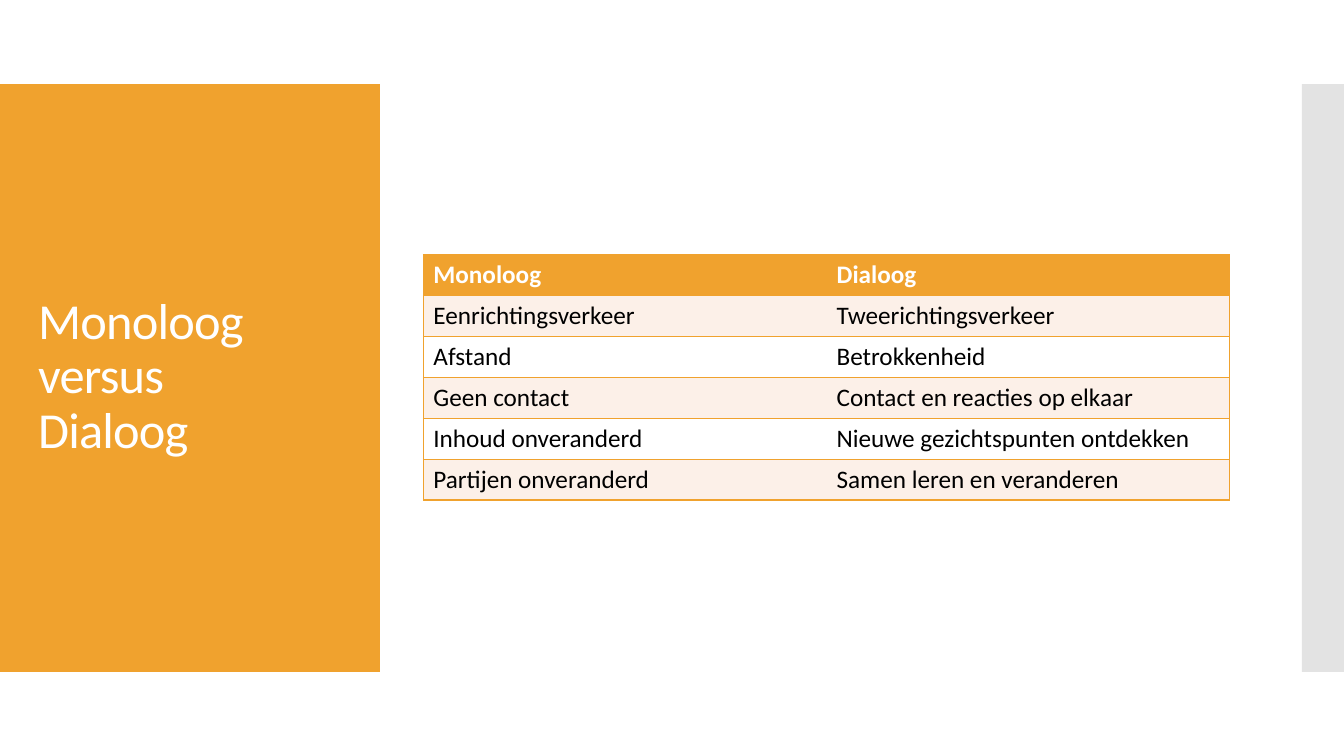
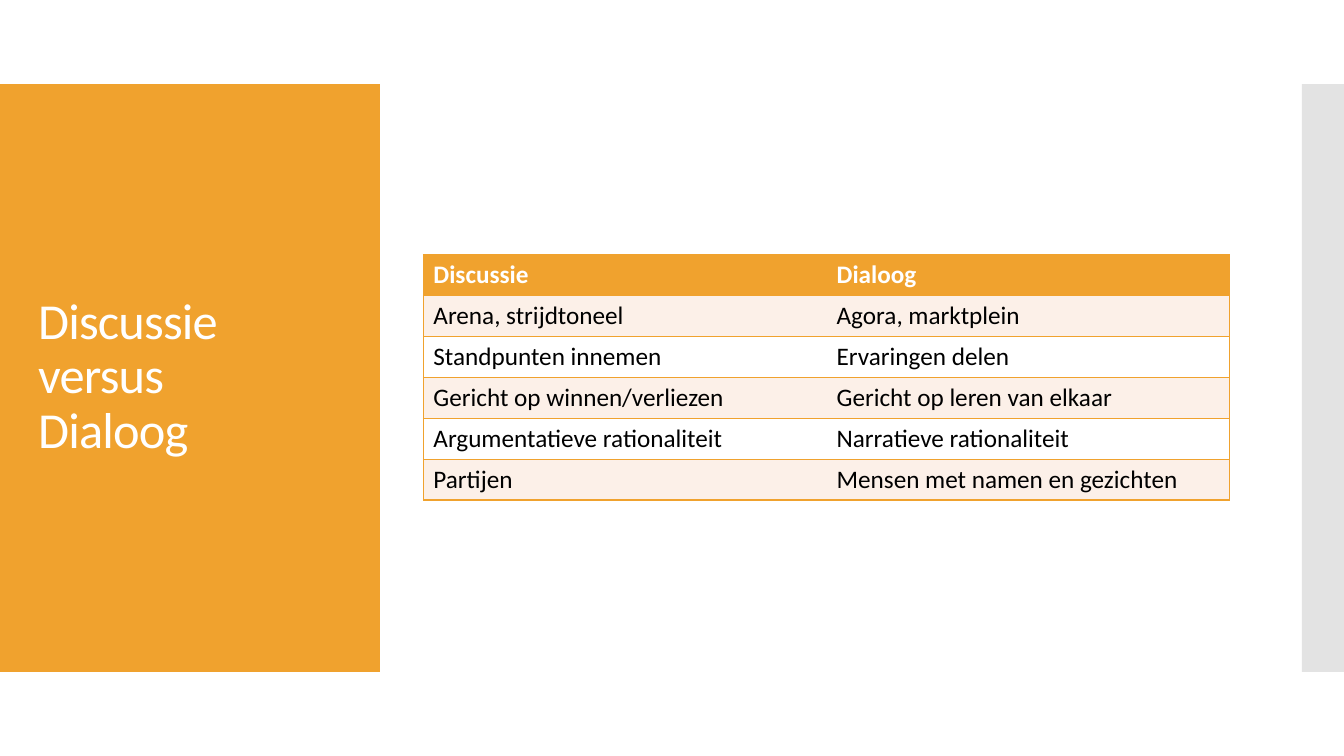
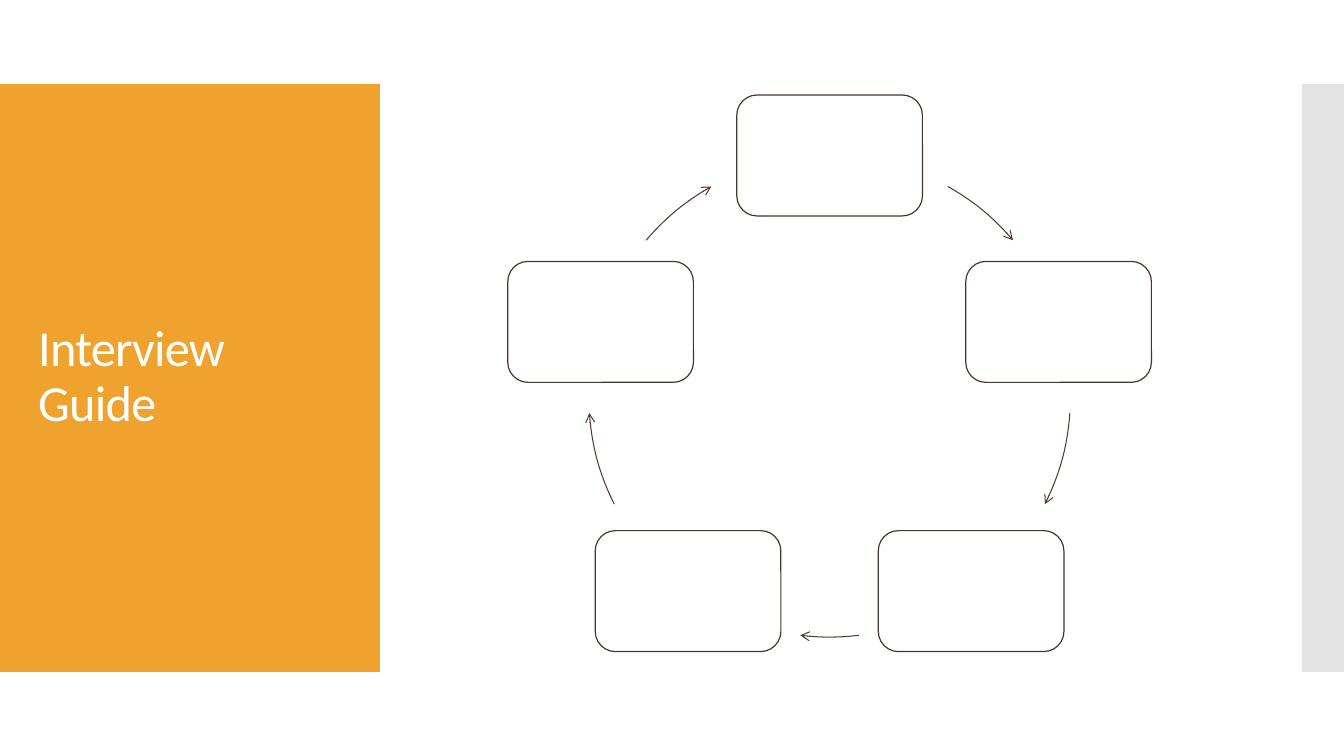
from math import cos, radians, sin

from lxml.etree import SubElement
from pptx import Presentation
from pptx.dml.color import RGBColor
from pptx.enum.shapes import MSO_SHAPE
from pptx.enum.text import MSO_ANCHOR
from pptx.oxml.ns import qn
from pptx.util import Pt

ORANGE, PALE, WHITE, BLACK = "F0A22E", "FCF0E8", "FFFFFF", "000000"
GREY, BOX_LINE, ARROW_LINE = "C8C8C8", "47362C", "4E3B30"
FONT = "Calibri"

BAND_TOP, BAND_H = 60, 420
TABLE_X, TABLE_Y, COLUMN_W, ROW_H = 302.4, 182, 288, 29.2
RING_X, RING_Y, RING_R = 592.6, 283.1, 172
BOX_W, BOX_H = 132.6, 86.4
# Start and end of each arrow, in degrees clockwise from the top of the ring
ARROWS = [(29.4, 49.6), (94, 116.6), (173, 187), (243.4, 266), (310.4, 330.6)]

TITLE_STYLE = {"name": FONT, "size": Pt(36), "bold": False}
HEADER_STYLE = {"name": FONT, "size": Pt(18), "bold": True}
BODY_STYLE = {**HEADER_STYLE, "bold": False}

MONOLOGUE_ROWS = [
    ("Monoloog", "Dialoog"),
    ("Eenrichtingsverkeer", "Tweerichtingsverkeer"),
    ("Afstand", "Betrokkenheid"),
    ("Geen contact", "Contact en reacties op elkaar"),
    ("Inhoud onveranderd", "Nieuwe gezichtspunten ontdekken"),
    ("Partijen onveranderd", "Samen leren en veranderen"),
]
DISCUSSION_ROWS = [
    ("Discussie", "Dialoog"),
    ("Arena, strijdtoneel", "Agora, marktplein"),
    ("Standpunten innemen", "Ervaringen delen"),
    ("Gericht op winnen/verliezen", "Gericht op leren van elkaar"),
    ("Argumentatieve rationaliteit", "Narratieve rationaliteit"),
    ("Partijen", "Mensen met namen en gezichten"),
]


def paint(target, color):
    """Give a fill a solid colour, or a font or line its colour."""
    if hasattr(target, "solid"):
        target.solid()
        target.fore_color.rgb = RGBColor.from_string(color)
    else:
        target.color.rgb = RGBColor.from_string(color)


def style_runs(p, style, color):
    for r in p.runs:
        for name, value in style.items():
            setattr(r.font, name, value)
        paint(r.font, color)


def add_preset(s, kind, x, y, w, h, fill=None, line=None, line_w=0.75):
    sp = s.shapes.add_shape(kind, Pt(x), Pt(y), Pt(w), Pt(h))
    sp.shadow.inherit = False
    if fill:
        paint(sp.fill, fill)
    else:
        sp.fill.background()
    if line:
        paint(sp.line, line)
        sp.line.width = Pt(line_w)
    else:
        sp.line.fill.background()
    return sp


def add_title(s, text):
    sp = s.shapes.add_textbox(Pt(20.2), Pt(88.6), Pt(231.8), Pt(362))
    tf = sp.text_frame
    tf.word_wrap = True
    tf.vertical_anchor = MSO_ANCHOR.MIDDLE
    p = tf.paragraphs[0]
    p.text = text
    p.line_spacing = 0.9
    style_runs(p, TITLE_STYLE, WHITE)
    for r in p.runs:
        r.font._element.set("spc", "-60")


def add_base_slide(prs, title):
    """Add a slide with the title panel and the grey strip."""
    s = prs.slides.add_slide(prs.slide_layouts[6])
    add_preset(s, MSO_SHAPE.RECTANGLE, 0, BAND_TOP, 271.4, BAND_H, ORANGE)
    strip = add_preset(s, MSO_SHAPE.RECTANGLE, 930, BAND_TOP, 30, BAND_H, GREY)
    color = strip._element.spPr.find(qn("a:solidFill"))[0]
    SubElement(color, qn("a:alpha"), val="50000")
    add_title(s, title)
    return s


def set_borders(cell, visible):
    """Draw the sides named in visible and blank the others."""
    tc_pr = cell._tc.get_or_add_tcPr()
    for side in "LRTB":
        ln = SubElement(tc_pr, qn(f"a:ln{side}"), w=str(Pt(1)))
        if side in visible:
            fill = SubElement(ln, qn("a:solidFill"))
            SubElement(fill, qn("a:srgbClr"), val=ORANGE)
        else:
            SubElement(ln, qn("a:noFill"))


def add_comparison(s, rows):
    table = s.shapes.add_table(
        len(rows), 2, Pt(TABLE_X), Pt(TABLE_Y),
        Pt(2 * COLUMN_W), Pt(len(rows) * ROW_H)).table
    table.first_row = table.horz_banding = False
    for i, row in enumerate(rows):
        table.rows[i].height = Pt(ROW_H)
        header = i == 0
        fill = ORANGE if header else PALE if i % 2 else WHITE
        for j, text in enumerate(row):
            cell = table.cell(i, j)
            set_borders(cell, "TB" + "LR"[j])
            paint(cell.fill, fill)
            p = cell.text_frame.paragraphs[0]
            p.text = text
            style_runs(p, HEADER_STYLE if header else BODY_STYLE,
                       WHITE if header else BLACK)


def add_ring_box(s, degrees):
    """Add a rounded box centred on the ring, clockwise from the top."""
    x = RING_X + RING_R * sin(radians(degrees))
    y = RING_Y - RING_R * cos(radians(degrees))
    add_preset(s, MSO_SHAPE.ROUNDED_RECTANGLE, x - BOX_W / 2, y - BOX_H / 2,
               BOX_W, BOX_H, WHITE, BOX_LINE, 0.85)


def add_ring_arrow(s, start, end):
    sp = add_preset(s, MSO_SHAPE.ARC, RING_X - RING_R, RING_Y - RING_R,
                    2 * RING_R, 2 * RING_R, line=ARROW_LINE)
    for i, degrees in enumerate((start, end)):
        # Arc angles run from 3 o'clock, in units of 0.6 per degree
        sp.adjustments[i] = (degrees - 90) % 360 * 0.6
    SubElement(sp.line._get_or_add_ln(), qn("a:tailEnd"), type="arrow")


def add_cycle(s):
    for i, (start, end) in enumerate(ARROWS):
        add_ring_box(s, i * 360 / len(ARROWS))
        add_ring_arrow(s, start, end)


def main():
    prs = Presentation()
    prs.slide_width, prs.slide_height = Pt(960), Pt(540)
    add_comparison(add_base_slide(prs, "Monoloog\vversus\vDialoog"),
                   MONOLOGUE_ROWS)
    add_comparison(add_base_slide(prs, "Discussie\vversus\vDialoog"),
                   DISCUSSION_ROWS)
    add_cycle(add_base_slide(prs, "Interview Guide"))
    prs.save("out.pptx")


if __name__ == "__main__":
    main()
